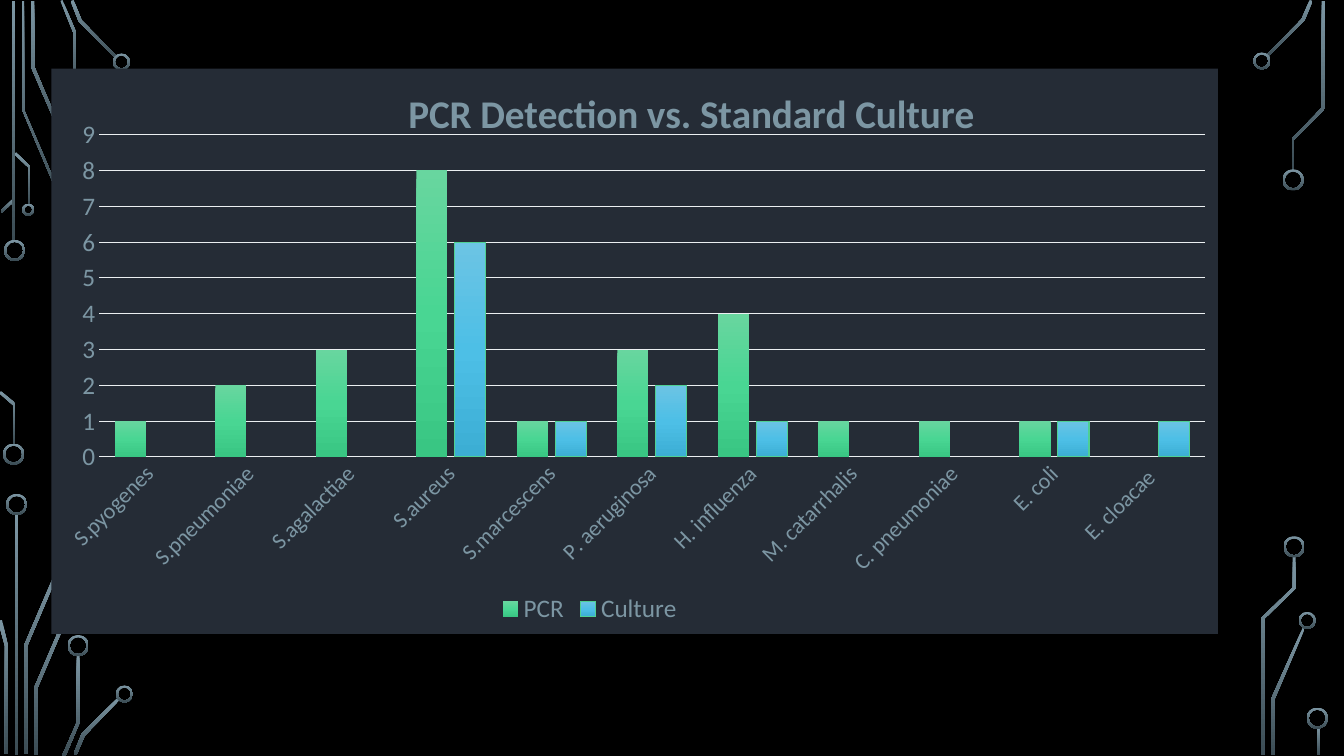
from lxml import etree
from pptx import Presentation
from pptx import util as u
from pptx.chart.data import CategoryChartData
from pptx.dml.color import RGBColor
from pptx.enum import chart as chart_enum
from pptx.enum import shapes as shape_enum
from pptx.oxml import parse_xml
from pptx.oxml.ns import nsdecls, qn

SLATE, PALE, PANEL = "7C96A3", "EBEFF1", "252C36"
TRACE_GRADIENT = [(0, SLATE), (100, "3B4C54")]


def rgb(value):
    return RGBColor.from_string(value)


def paint_gradient(fill, element, stops):
    """Fill downwards with (percent, colour) stops; element holds the fill's XML."""
    fill.gradient()
    fill.gradient_angle = 270
    stop_list = element.find(".//" + qn("a:gsLst"))
    for stop in list(stop_list):
        stop_list.remove(stop)
    for percent, colour in stops:
        stop = etree.SubElement(stop_list, qn("a:gs"), pos=str(percent * 1000))
        etree.SubElement(stop, qn("a:srgbClr"), val=colour)


presentation = Presentation()
presentation.slide_width = u.Inches(13.33)
presentation.slide_height = u.Inches(7.5)
slide = presentation.slides.add_slide(presentation.slide_layouts[6])
slide.background.fill.solid()
slide.background.fill.fore_color.rgb = rgb("000000")

# Circuit traces: outlines in inches
trace_outlines = [
    # top left
    [(0.6, 1.99), (0.22, 1.09), (0.22, 0.01), (0.24, 0.01), (0.24, 1.09), (0.62, 1.98)],
    [(0.7, 1.57), (0.31, 0.67), (0.31, 0.01), (0.34, 0.01), (0.34, 0.66), (0.72, 1.56)],
    [(0.76, 1), (0.73, 1), (0.73, 0.33), (0.6, 0.01), (0.62, 0), (0.76, 0.33)],
    [(1.15, 0.58), (0.78, 0.21), (0.7, 0.01), (0.73, 0), (0.81, 0.2), (1.16, 0.56)],
    [(0.02, 2.11), (0.01, 2.09), (0.13, 1.97), (0.15, 1.99)],
    [(0.15, 4.41), (0.13, 4.41), (0.13, 4.02), (-0.01, 3.9), (0.01, 3.88), (0.15, 4)],
    [(0.3, 2.03), (0.28, 2.03), (0.28, 1.66), (0.14, 1.53), (0.16, 1.51), (0.3, 1.65)],
    # bottom left
    [(0.27, 7.48), (0.24, 7.48), (0.24, 6.4), (0.62, 5.51), (0.65, 5.52), (0.27, 6.41)],
    [(0.08, 7.48), (0.05, 7.48), (0.05, 6.41), (-0.02, 6.16), (0.02, 6.15), (0.08, 6.41)],
    [(0.37, 7.49), (0.34, 7.49), (0.34, 6.82), (0.72, 5.93), (0.75, 5.94), (0.37, 6.83)],
    [(0.65, 7.5), (0.62, 7.49), (0.76, 7.17), (0.76, 6.5), (0.79, 6.5), (0.79, 7.17)],
    [(0.76, 7.49), (0.73, 7.48), (0.81, 7.28), (1.17, 6.92), (1.19, 6.94), (0.84, 7.3)],
    # top right
    [(12.58, 0.56), (12.56, 0.55), (12.91, 0.19), (12.99, 0), (13.02, 0.01), (12.94, 0.2)],
    [(12.83, 1.69), (12.81, 1.69), (12.81, 1.38), (13.11, 1.07), (13.11, 0.01),
     (13.14, 0.01), (13.14, 1.08), (12.83, 1.39)],
    # bottom right
    [(12.64, 7.49), (12.61, 7.49), (12.61, 6.93), (12.92, 6.23), (12.94, 6.24), (12.64, 6.94)],
    [(12.54, 7.49), (12.51, 7.49), (12.51, 6.13), (12.82, 5.83), (12.82, 5.52),
     (12.85, 5.52), (12.85, 5.84), (12.54, 6.14)],
]
# Straight traces: left, top, height
straight_traces = [(0.12, 0.01, 2.39), (0.15, 5.1, 2.39), (13.06, 7.21, 0.28)]
# Ring pads: left, top, diameter
ring_pads = [
    (0.04, 2.38, 0.21), (0.03, 4.4, 0.21), (1.12, 0.53, 0.17), (0.22, 2.02, 0.12),
    (0.06, 4.9, 0.21), (0.67, 6.3, 0.21), (1.15, 6.8, 0.17),
    (12.43, 0.52, 0.17), (12.72, 1.68, 0.21), (12.88, 6.07, 0.17),
    (12.73, 5.32, 0.21), (12.96, 7.02, 0.21),
]

circuit = []
for outline in trace_outlines:
    points = [(u.Inches(x), u.Inches(y)) for x, y in outline]
    builder = slide.shapes.build_freeform(*points[0])
    builder.add_line_segments(points[1:], close=True)
    circuit.append(builder.convert_to_shape())
for left, top, height in straight_traces:
    circuit.append(slide.shapes.add_shape(
        shape_enum.MSO_SHAPE.RECTANGLE,
        u.Inches(left), u.Inches(top), u.Inches(0.03), u.Inches(height)))
for left, top, diameter in ring_pads:
    ring = slide.shapes.add_shape(
        shape_enum.MSO_SHAPE.DONUT,
        u.Inches(left), u.Inches(top), u.Inches(diameter), u.Inches(diameter))
    ring.adjustments[0] = 0.02 / diameter
    circuit.append(ring)
for shape in circuit:
    shape.shadow.inherit = False
    shape.line.fill.background()
    paint_gradient(shape.fill, shape.element, TRACE_GRADIENT)

# Chart
data = CategoryChartData()
data.categories = [
    "S.pyogenes", "S.pneumoniae", "S.agalactiae", "S.aureus", "S.marcescens", "P. aeruginosa",
    "H. influenza", "M. catarrhalis", "C. pneumoniae", "E. coli", "E. cloacae "]
data.add_series("PCR", [1, 2, 3, 8, 1, 3, 4, 1, 1, 1, None])
data.add_series("Culture", [None, None, None, 6, 1, 2, 1, None, None, 1, 1])
chart = slide.shapes.add_chart(
    chart_enum.XL_CHART_TYPE.COLUMN_CLUSTERED,
    u.Inches(0.51), u.Inches(0.68), u.Inches(11.57), u.Inches(5.61), data).chart

chart.has_title = True
chart.chart_title.text_frame.text = "PCR Detection vs. Standard Culture"
chart.chart_title.include_in_layout = False
chart.has_legend = True
chart.legend.position = chart_enum.XL_LEGEND_POSITION.BOTTOM
chart.legend.include_in_layout = False
title_font = chart.chart_title.text_frame.paragraphs[0].font
title_font.bold = True
category_axis, value_axis = chart.category_axis, chart.value_axis
for font, size in [(chart.font, 18), (title_font, 28), (chart.legend.font, 18),
                   (category_axis.tick_labels.font, 16), (value_axis.tick_labels.font, 18)]:
    font.name = "Calibri"
    font.size = u.Pt(size)
    font.color.rgb = rgb(SLATE)

value_axis.minimum_scale, value_axis.maximum_scale, value_axis.major_unit = 0, 9, 1
value_axis.has_major_gridlines = True
value_axis.format.line.fill.background()
for axis in (category_axis, value_axis):
    axis.major_tick_mark = chart_enum.XL_TICK_MARK.NONE
for line in (category_axis.format.line, value_axis.major_gridlines.format.line):
    line.color.rgb = rgb(PALE)
    line.width = u.Pt(0.75)
category_axis._element.find(".//" + qn("a:bodyPr")).set("rot", "-2700000")

plot = chart.plots[0]
plot.vary_by_categories = False
plot.gap_width = 100
plot.overlap = -24
bar_gradients = [
    [(0, "68D69F"), (50, "49D693"), (100, "39C683")],
    [(0, "6CC4E4"), (50, "4DBFE6"), (100, "3CAED4")],
]
for series, stops in zip(plot.series, bar_gradients):
    paint_gradient(series.format.fill, series._element, stops)
culture_line = plot.series[1].format.line
culture_line.color.rgb = rgb("4FD093")
culture_line.width = u.Pt(0.75)

# Panel colour and manual layout of title, legend and plot
chart_space = chart._chartSpace
chart_space.find(qn("c:chart")).addnext(parse_xml(
    f'<c:spPr {nsdecls("c", "a")}><a:solidFill><a:srgbClr val="{PANEL}"/></a:solidFill>'
    '<a:ln><a:noFill/></a:ln></c:spPr>'))
layouts = [
    ("c:title", "c:tx", {"xMode": "edge", "yMode": "edge", "x": 0.3, "y": 0.02}),
    ("c:legend", "c:legendPos", {"xMode": "edge", "yMode": "edge", "x": 0.38, "y": 0.92}),
    ("c:plotArea", None, {"layoutTarget": "inner", "xMode": "edge", "yMode": "edge",
                          "x": 0.041, "y": 0.117, "w": 0.948, "h": 0.57}),
]
for part, predecessor, settings in layouts:
    element = chart_space.find(".//" + qn(part))
    for old_layout in element.findall(qn("c:layout")):
        element.remove(old_layout)
    layout = etree.Element(qn("c:layout"))
    manual = etree.SubElement(layout, qn("c:manualLayout"))
    for name, value in settings.items():
        etree.SubElement(manual, qn("c:" + name), val=str(value))
    if predecessor:
        element.find(qn(predecessor)).addnext(layout)
    else:
        element.insert(0, layout)

presentation.save("out.pptx")
